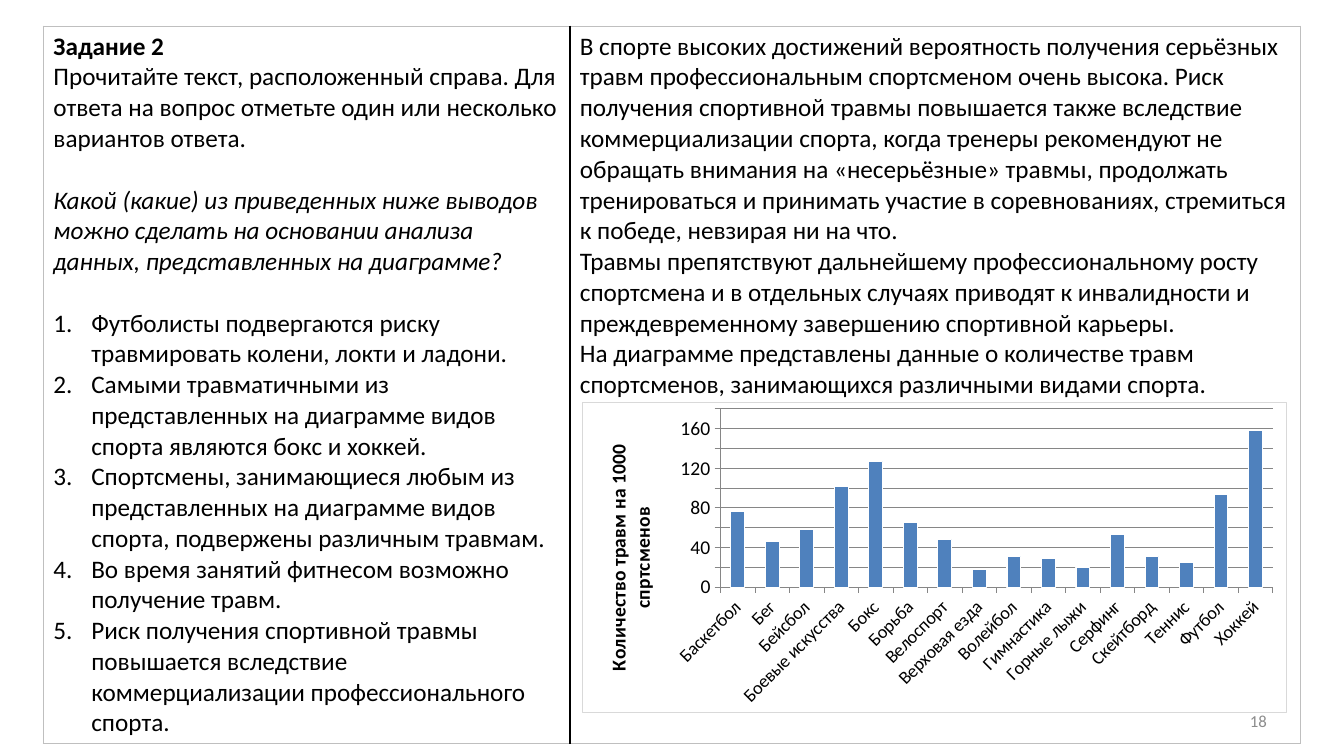
import pptx
import pptx.chart.data
import pptx.dml.color
import pptx.enum.chart
import pptx.enum.text
import pptx.oxml
import pptx.oxml.ns
import pptx.util
from dataclasses import dataclass

Pt = pptx.util.Pt
NAMESPACE = pptx.oxml.ns.nsdecls("a", "c")


@dataclass
class Theme:
    font: str = "Calibri"
    text: str = "000000"
    muted: str = "8C8C8C"
    frame: str = "BFBFBF"
    chart_frame: str = "D9D9D9"
    grid: str = "868686"
    bar: str = "4F81BD"
    bar_edge: str = "FFFFFF"
    body_size: float = 18
    axis_size: float = 14
    category_size: float = 13
    number_size: float = 12
    line_gap: float = 22
    list_indent: float = 27


TASK = [
    ("Задание 2", dict(bold=True)),
    ("Прочитайте текст, расположенный справа. Для ответа на вопрос отметьте один "
     "или несколько вариантов ответа.", {}),
    ("Какой (какие) из приведенных ниже выводов можно сделать на основании анализа "
     "данных, представленных на диаграмме?", dict(italic=True, gap=True)),
]
ANSWERS = [
    "Футболисты подвергаются риску травмировать колени, локти и ладони.",
    "Самыми травматичными из представленных на диаграмме видов спорта являются бокс и хоккей.",
    "Спортсмены, занимающиеся любым из представленных на диаграмме видов спорта, "
    "подвержены различным травмам.",
    "Во время занятий фитнесом возможно получение травм.",
    "Риск получения спортивной травмы повышается вследствие коммерциализации "
    "профессионального спорта.",
]
ARTICLE = [
    "В спорте высоких достижений вероятность получения серьёзных травм профессиональным "
    "спортсменом очень высока. Риск получения спортивной травмы повышается также вследствие "
    "коммерциализации спорта, когда тренеры рекомендуют не обращать внимания на "
    "«несерьёзные» травмы, продолжать тренироваться и принимать участие в соревнованиях, "
    "стремиться к победе, невзирая ни на что.",
    "Травмы препятствуют дальнейшему профессиональному росту спортсмена и в отдельных "
    "случаях приводят к инвалидности и преждевременному завершению спортивной карьеры.",
    "На диаграмме представлены данные о количестве травм спортсменов, занимающихся "
    "различными видами спорта.",
]
INJURIES = {
    "Баскетбол": 76, "Бег": 46, "Бейсбол": 58, "Боевые искусства": 102,
    "Бокс": 127, "Борьба": 65, "Велоспорт": 48, "Верховая езда": 18,
    "Волейбол": 31, "Гимнастика": 29, "Горные лыжи": 20, "Серфинг": 53,
    "Скейтборд": 31, "Теннис": 25, "Футбол": 93, "Хоккей": 158,
}


def rgb(color):
    return pptx.dml.color.RGBColor.from_string(color)


def style_font(font, theme, size, color=None, bold=False, italic=False):
    font.name, font.size = theme.font, Pt(size)
    font.bold, font.italic = bold, italic
    font.color.rgb = rgb(color or theme.text)


def style_line(line, color, width=0.75):
    line.color.rgb = rgb(color)
    line.width = Pt(width)


def write(frame, text, theme, size=None, gap=False, numbered=False, align=None, **font):
    """Add a paragraph, filling the frame's first one if it is still empty."""
    para = frame.paragraphs[0] if not frame.text else frame.add_paragraph()
    para.alignment = align
    if gap:
        para.space_before = Pt(theme.line_gap)
    if numbered:
        properties = para._p.get_or_add_pPr()
        properties.set("marL", str(Pt(theme.list_indent)))
        properties.set("indent", str(-Pt(theme.list_indent)))
        properties.append(pptx.oxml.parse_xml(
            f'<a:buAutoNum {NAMESPACE} type="arabicPeriod"/>'))
    span = para.add_run()
    span.text = text
    style_font(span.font, theme, size or theme.body_size, **font)


class Page:
    def __init__(self, deck, theme):
        self.theme = theme
        self.slide = deck.slides.add_slide(deck.slide_layouts[6])

    def table(self, left, top, widths, height):
        frame = self.slide.shapes.add_table(
            1, len(widths), Pt(left), Pt(top), Pt(sum(widths)), Pt(height))
        table = frame.table
        table.first_row = table.horz_banding = False
        table.rows[0].height = Pt(height)
        last = len(widths) - 1
        inner, outer = (self.theme.text, 1.5), (self.theme.frame, 1)
        for index, width in enumerate(widths):
            table.columns[index].width = Pt(width)
            cell = table.cell(0, index)
            cell.fill.background()
            self.cell_borders(cell, L=inner if index else outer,
                              R=inner if index < last else outer, T=outer, B=outer)
        return [cell.text_frame for cell in table.rows[0].cells]

    def cell_borders(self, cell, **sides):
        properties = cell._tc.get_or_add_tcPr()
        for index, (side, (color, width)) in enumerate(sides.items()):
            properties.insert(index, pptx.oxml.parse_xml(
                f'<a:ln{side} {NAMESPACE} w="{Pt(width)}"><a:solidFill>'
                f'<a:srgbClr val="{color}"/></a:solidFill></a:ln{side}>'))

    def text(self, text, left, top, width, height, **style):
        box = self.slide.shapes.add_textbox(Pt(left), Pt(top), Pt(width), Pt(height))
        box.text_frame.word_wrap = True
        box.text_frame.vertical_anchor = pptx.enum.text.MSO_ANCHOR.MIDDLE
        write(box.text_frame, text, self.theme, **style)

    def column_chart(self, values, title, left, top, width, height):
        theme = self.theme
        data = pptx.chart.data.CategoryChartData()
        data.categories = list(values)
        data.add_series("Series 1", list(values.values()))
        chart = self.slide.shapes.add_chart(
            pptx.enum.chart.XL_CHART_TYPE.COLUMN_CLUSTERED,
            Pt(left), Pt(top), Pt(width), Pt(height), data).chart
        chart.has_legend = chart.has_title = False
        style_font(chart.font, theme, theme.axis_size)

        plot = chart.plots[0]
        plot.gap_width = 150
        plot.vary_by_categories = False
        bars = plot.series[0].format
        bars.fill.solid()
        bars.fill.fore_color.rgb = rgb(theme.bar)
        style_line(bars.line, theme.bar_edge)

        sizes = (chart.category_axis, theme.category_size), (chart.value_axis, theme.axis_size)
        for axis, size in sizes:
            style_font(axis.tick_labels.font, theme, size)
            style_line(axis.format.line, theme.grid)
            axis.major_tick_mark = pptx.enum.chart.XL_TICK_MARK.OUTSIDE
        turned = chart.category_axis.tick_labels.font._element.getparent().getparent().getparent()
        turned.find(pptx.oxml.ns.qn("a:bodyPr")).set("rot", str(-45 * 60000))

        axis = chart.value_axis
        axis.minimum_scale, axis.maximum_scale, axis.major_unit = 0, 180, 20
        axis.has_major_gridlines = True
        style_line(axis.major_gridlines.format.line, theme.grid)
        write(axis.axis_title.text_frame, title, theme, size=theme.axis_size, bold=True)
        self.chart_layout(chart, x=0.196, y=0.022, w=0.785, h=0.574)

    def chart_layout(self, chart, **parts):
        """Fix the inner plot area, in fractions of the chart, and frame the chart."""
        area = chart._chartSpace.chart.plotArea
        for layout in area.findall(pptx.oxml.ns.qn("c:layout")):
            area.remove(layout)
        modes = "".join(f'<c:{key}Mode val="edge"/>' for key in "xy")
        places = "".join(f'<c:{key} val="{value}"/>' for key, value in parts.items())
        area.insert(0, pptx.oxml.parse_xml(
            f'<c:layout {NAMESPACE}><c:manualLayout><c:layoutTarget val="inner"/>'
            f'{modes}{places}</c:manualLayout></c:layout>'))
        chart._chartSpace.chart.addnext(pptx.oxml.parse_xml(
            f'<c:spPr {NAMESPACE}><a:noFill/><a:ln w="{Pt(0.75)}"><a:solidFill>'
            f'<a:srgbClr val="{self.theme.chart_frame}"/></a:solidFill></a:ln></c:spPr>'))


def main():
    deck = pptx.Presentation()
    deck.slide_width, deck.slide_height = Pt(960), Pt(540)
    theme = Theme()
    page = Page(deck, theme)
    task, article = page.table(31, 18.7, [376, 522], 504)
    for text, style in TASK:
        write(task, text, theme, **style)
    for index, text in enumerate(ANSWERS):
        write(task, text, theme, numbered=True, gap=index == 0)
    for text in ARTICLE:
        write(article, text, theme)
    page.text("18", 688, 500.4, 224, 28.8, size=theme.number_size, color=theme.muted,
              align=pptx.enum.text.PP_ALIGN.RIGHT)
    page.column_chart(INJURIES, "Количество травм на 1000 спртсменов",
                      415.8, 286.8, 503.3, 222.5)
    deck.save("out.pptx")


if __name__ == "__main__":
    main()
